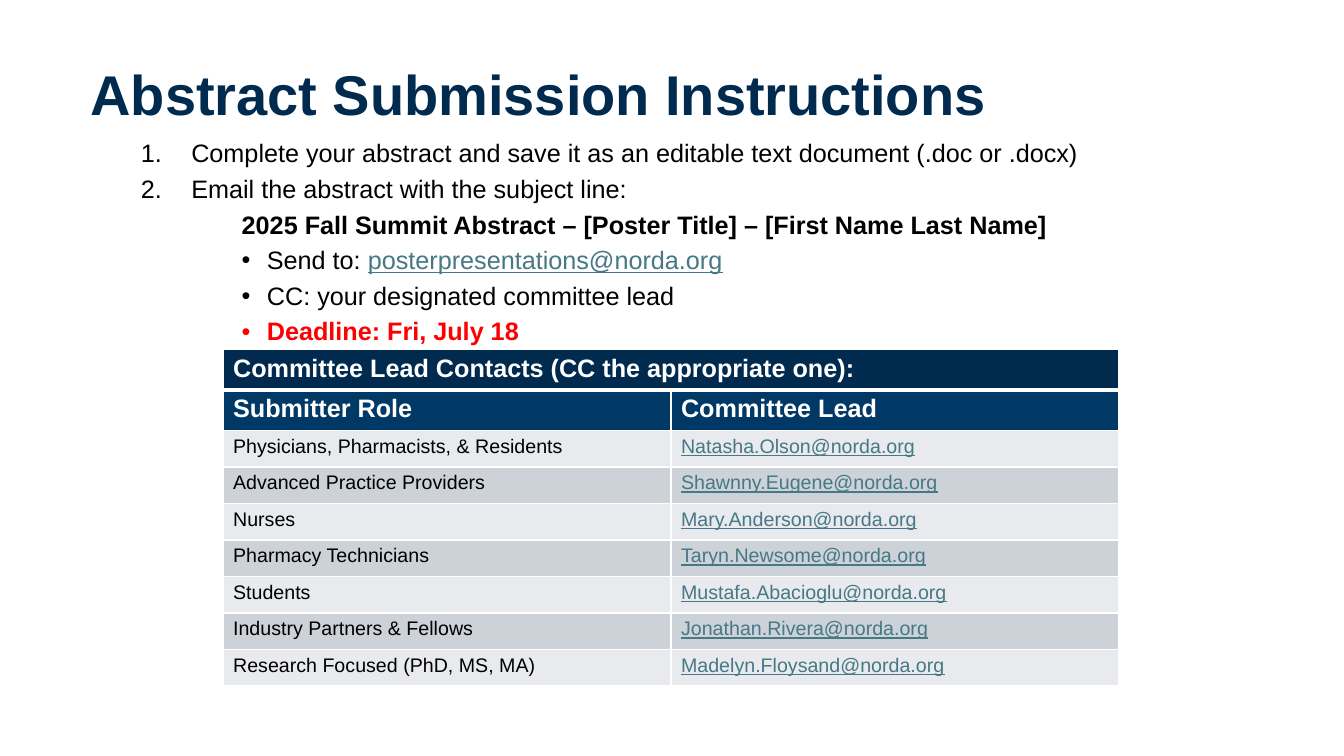
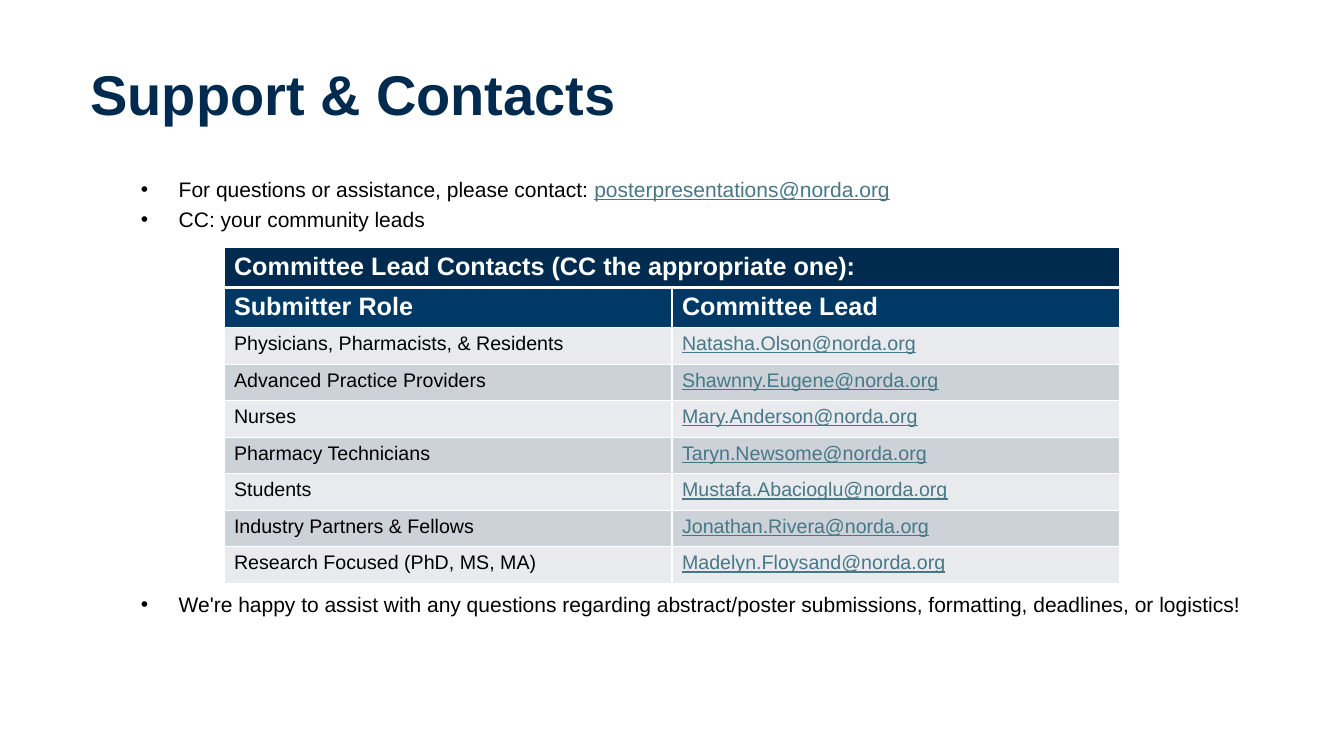
"""Build the abstract submission and contact slides."""
from dataclasses import dataclass

from lxml import etree
from pptx import Presentation
from pptx import util as u
from pptx.dml.color import RGBColor
from pptx.enum import text as t
from pptx.oxml.ns import qn


@dataclass(frozen=True)
class Theme:
    """Colours, type sizes and shared measures in points."""
    font: str = "Arial"
    navy: str = "002B4E"
    blue: str = "003866"
    light: str = "E8EAED"
    grey: str = "CCD2D8"
    white: str = "FFFFFF"
    black: str = "000000"
    red: str = "FF0000"
    link: str = "467886"
    title_size: float = 40
    body_size: float = 18
    note_size: float = 15
    cell_size: float = 14
    line_spacing: float = 0.9
    left: float = 57.6
    width: float = 844.5
    header_row: float = 27.2
    data_row: float = 26.1


THEME = Theme()
SUPPORT_EMAIL = "posterpresentations@norda.org"
TABLE_TITLE = "Committee Lead Contacts (CC the appropriate one):"
COLUMN_HEADS = ("Submitter Role", "Committee Lead")
LEADS = (
    ("Physicians, Pharmacists, & Residents", "Natasha.Olson"),
    ("Advanced Practice Providers", "Shawnny.Eugene"),
    ("Nurses", "Mary.Anderson"),
    ("Pharmacy Technicians", "Taryn.Newsome"),
    ("Students", "Mustafa.Abacioglu"),
    ("Industry Partners & Fellows", "Jonathan.Rivera"),
    ("Research Focused (PhD, MS, MA)", "Madelyn.Floysand"),
)
NUMBERED = dict(margin=72, hanging=36, number=True)
NESTED_TEXT = dict(margin=108)
NESTED_BULLET = dict(margin=126, hanging=18, bullet="•")
NOTE_BULLET = dict(margin=63, hanging=27, bullet="•")


def add_run(paragraph, wording, size=THEME.body_size, color=THEME.black, bold=False, underline=False):
    """Add formatted text to a paragraph."""
    run = paragraph.add_run()
    run.text = wording
    font = run.font
    font.name, font.size = THEME.font, u.Pt(size)
    font.bold, font.underline = bold, underline
    font.color.rgb = RGBColor.from_string(color)


def add_link(paragraph, address, size):
    """Add an underlined address in the link colour."""
    add_run(paragraph, address, size=size, color=THEME.link, underline=True)


def format_paragraph(paragraph, margin=0, hanging=0, bullet=None, number=False):
    """Set the indent and marker of a paragraph."""
    properties = paragraph._p.get_or_add_pPr()
    properties.set("marL", str(u.Pt(margin)))
    properties.set("indent", str(-u.Pt(hanging)))
    if number:
        etree.SubElement(properties, qn("a:buAutoNum"), type="arabicPeriod")
    elif bullet:
        etree.SubElement(properties, qn("a:buFont"), typeface=THEME.font)
        etree.SubElement(properties, qn("a:buChar"), char=bullet)
    paragraph.line_spacing = THEME.line_spacing


def add_text_area(slide, top, height, anchor=t.MSO_ANCHOR.TOP):
    """Add a wrapping text area across the content width."""
    shape = slide.shapes.add_textbox(u.Pt(THEME.left), u.Pt(top), u.Pt(THEME.width), u.Pt(height))
    frame = shape.text_frame
    frame.word_wrap = True
    frame.vertical_anchor = anchor
    return frame


def add_title(slide, wording):
    """Add the slide title."""
    frame = add_text_area(slide, 42.5, 54.7, t.MSO_ANCHOR.MIDDLE)
    format_paragraph(frame.paragraphs[0])
    add_run(frame.paragraphs[0], wording, size=THEME.title_size, color=THEME.navy, bold=True)


def add_list(slide, top, height, items, size, gap):
    """Add paragraphs, each given as wording, address, layout and text format."""
    frame = add_text_area(slide, top, height)
    for index, (wording, address, layout, style) in enumerate(items):
        paragraph = frame.add_paragraph() if index else frame.paragraphs[0]
        format_paragraph(paragraph, **layout)
        if index:
            paragraph.space_before = u.Pt(gap)
        add_run(paragraph, wording, size=size, **style)
        if address:
            add_link(paragraph, address, size)


def set_borders(cell, top=1, bottom=1):
    """Draw white cell borders with the given top and bottom weights."""
    properties = cell._tc.get_or_add_tcPr()
    weights = {"a:lnL": 1, "a:lnR": 1, "a:lnT": top, "a:lnB": bottom}
    for position, (tag, weight) in enumerate(weights.items()):
        line = etree.Element(qn(tag), w=str(u.Pt(weight)))
        fill = etree.SubElement(line, qn("a:solidFill"))
        etree.SubElement(fill, qn("a:srgbClr"), val=THEME.white)
        properties.insert(position, line)


def add_contact_table(slide, left, top, width=640):
    """Add the committee lead table."""
    rows = [(TABLE_TITLE, ""), COLUMN_HEADS]
    rows += [(role, f"{name}@norda.org") for role, name in LEADS]
    heights = [THEME.header_row] * 2 + [THEME.data_row] * len(LEADS)
    frame = slide.shapes.add_table(len(rows), 2, u.Pt(left), u.Pt(top), u.Pt(width), u.Pt(sum(heights)))
    table = frame.table
    table.first_row = table.horz_banding = False
    for column in table.columns:
        column.width = u.Pt(width / 2)
    table.cell(0, 0).merge(table.cell(0, 1))
    for row, (values, height) in enumerate(zip(rows, heights)):
        table.rows[row].height = u.Pt(height)
        fill = (THEME.navy, THEME.blue)[row] if row < 2 else (THEME.light, THEME.grey)[row % 2]
        for column, value in enumerate(values):
            cell = table.cell(row, column)
            cell.fill.solid()
            cell.fill.fore_color.rgb = RGBColor.from_string(fill)
            set_borders(cell, top=3 if row == 1 else 1, bottom=3 if row == 0 else 1)
            paragraph = cell.text_frame.paragraphs[0]
            if not value:
                continue
            if row < 2:
                add_run(paragraph, value, color=THEME.white, bold=True)
            elif column:
                add_link(paragraph, value, THEME.cell_size)
            else:
                add_run(paragraph, value, size=THEME.cell_size)


def build_instructions(slide):
    """Build the submission instructions slide."""
    add_title(slide, "Abstract Submission Instructions")
    items = (
        ("Complete your abstract and save it as an editable text document (.doc or .docx)", None, NUMBERED, {}),
        ("Email the abstract with the subject line:", None, NUMBERED, {}),
        ("2025 Fall Summit Abstract – [Poster Title] – [First Name Last Name]", None, NESTED_TEXT,
         dict(bold=True)),
        ("Send to: ", SUPPORT_EMAIL, NESTED_BULLET, {}),
        ("CC: your designated committee lead", None, NESTED_BULLET, {}),
        ("Deadline: Fri, July 18", None, NESTED_BULLET, dict(color=THEME.red, bold=True)),
    )
    add_list(slide, 97.2, 152, items, THEME.body_size, gap=6)
    add_contact_table(slide, 159.3, 249.8)


def build_support(slide):
    """Build the support contacts slide."""
    add_title(slide, "Support & Contacts")
    contacts = (
        ("For questions or assistance, please contact: ", SUPPORT_EMAIL, NOTE_BULLET, {}),
        ("CC: your community leads", None, NOTE_BULLET, {}),
    )
    closing = (
        ("We're happy to assist with any questions regarding abstract/poster submissions, "
         "formatting, deadlines, or logistics!", None, NOTE_BULLET, {}),
    )
    add_list(slide, 124.6, 46, contacts, THEME.note_size, gap=5)
    add_contact_table(slide, 160, 176.5)
    add_list(slide, 421, 26, closing, THEME.note_size, gap=5)


def main():
    """Build and save the presentation."""
    presentation = Presentation()
    presentation.slide_width, presentation.slide_height = u.Pt(960), u.Pt(540)
    for build in (build_instructions, build_support):
        build(presentation.slides.add_slide(presentation.slide_layouts[6]))
    presentation.save("out.pptx")


if __name__ == "__main__":
    main()
